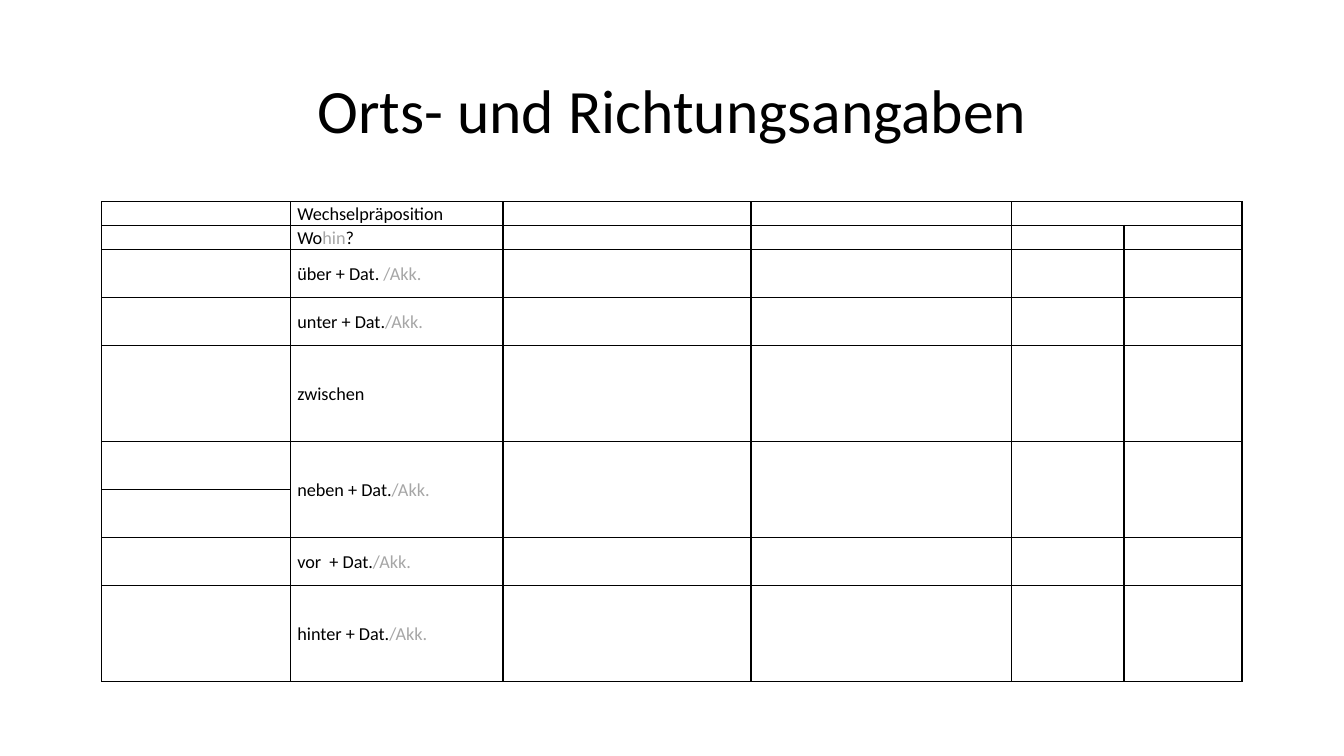
import lxml.etree
import pptx
import pptx.dml.color
import pptx.enum.text
import pptx.oxml.ns
import pptx.util

Inches = pptx.util.Inches
Pt = pptx.util.Pt
BLACK = pptx.dml.color.RGBColor(0x00, 0x00, 0x00)
GREY = pptx.dml.color.RGBColor(0xA6, 0xA6, 0xA6)
WHITE = pptx.dml.color.RGBColor(0xFF, 0xFF, 0xFF)

COLUMN_WIDTHS = [1.87, 2.11, 2.46, 2.58, 1.12, 1.17]
LINE_HEIGHT = 0.238
ROW_LINES = [1, 1, 2, 2, 4, 2, 2, 2, 4]
CASE = [("/Akk.", GREY)]
PREPOSITIONS = {
    0: [("Wechselpräposition", BLACK)],
    1: [("Wo", BLACK), ("hin", GREY), ("?", BLACK)],
    2: [("über + Dat. ", BLACK)] + CASE,
    3: [("unter + Dat.", BLACK)] + CASE,
    4: [("zwischen", BLACK)],
    5: [("neben + Dat.", BLACK)] + CASE,
    7: [("vor  + Dat.", BLACK)] + CASE,
    8: [("hinter + Dat.", BLACK)] + CASE,
}
MERGES = [((0, 4), (0, 5))] + [((5, column), (6, column)) for column in range(1, 6)]


class SlideBuilder:
    """Holds the text style and the current slide."""

    def __init__(self, deck):
        self.font_name = "Calibri"
        self.title_size = 44
        self.cell_size = 13
        self.page = deck.slides.add_slide(deck.slide_layouts[5])

    def style_span(self, span, size, color):
        span.font.name = self.font_name
        span.font.size = Pt(size)
        span.font.color.rgb = color

    def title(self, text, left, top, width, height):
        box = self.page.shapes.title
        box.left, box.top = Inches(left), Inches(top)
        box.width, box.height = Inches(width), Inches(height)
        box.text_frame.text = text
        box.text_frame.vertical_anchor = pptx.enum.text.MSO_ANCHOR.MIDDLE
        para = box.text_frame.paragraphs[0]
        para.alignment = pptx.enum.text.PP_ALIGN.CENTER
        para.line_spacing = 0.9
        self.style_span(para.runs[0], self.title_size, BLACK)

    def borders(self, cell):
        properties = cell._tc.get_or_add_tcPr()
        for position, side in enumerate(("lnL", "lnR", "lnT", "lnB")):
            line = lxml.etree.Element(pptx.oxml.ns.qn("a:" + side), w=str(Pt(1)))
            fill = lxml.etree.SubElement(line, pptx.oxml.ns.qn("a:solidFill"))
            lxml.etree.SubElement(fill, pptx.oxml.ns.qn("a:srgbClr"), val=str(BLACK))
            properties.insert(position, line)

    def cell(self, cell, spans):
        cell.fill.solid()
        cell.fill.fore_color.rgb = WHITE
        cell.margin_left = cell.margin_right = Inches(0.07)
        cell.margin_top = cell.margin_bottom = 0
        cell.vertical_anchor = pptx.enum.text.MSO_ANCHOR.MIDDLE
        self.borders(cell)
        para = cell.text_frame.paragraphs[0]
        para.line_spacing = 1.07
        for text, color in spans:
            span = para.add_run()
            span.text = text
            self.style_span(span, self.cell_size, color)
        lxml.etree.SubElement(
            para._p, pptx.oxml.ns.qn("a:endParaRPr"), sz=str(self.cell_size * 100)
        )

    def table(self, left, top):
        frame = self.page.shapes.add_table(
            len(ROW_LINES), len(COLUMN_WIDTHS), Inches(left), Inches(top),
            Inches(sum(COLUMN_WIDTHS)), Inches(sum(ROW_LINES) * LINE_HEIGHT),
        )
        table = frame.table
        table.first_row = table.horz_banding = False
        for column, width in zip(table.columns, COLUMN_WIDTHS):
            column.width = Inches(width)
        for row_index, (row, lines) in enumerate(zip(table.rows, ROW_LINES)):
            row.height = Inches(lines * LINE_HEIGHT)
            for column_index, cell in enumerate(row.cells):
                spans = PREPOSITIONS.get(row_index, []) if column_index == 1 else []
                self.cell(cell, spans)
        for first, last in MERGES:
            table.cell(*first).merge(table.cell(*last))


def main():
    deck = pptx.Presentation()
    deck.slide_width, deck.slide_height = Inches(13.33), Inches(7.5)
    builder = SlideBuilder(deck)
    builder.title("Orts- und Richtungsangaben", 0.92, 0.4, 11.5, 1.45)
    builder.table(1.01, 2)
    deck.save("out.pptx")


if __name__ == "__main__":
    main()
